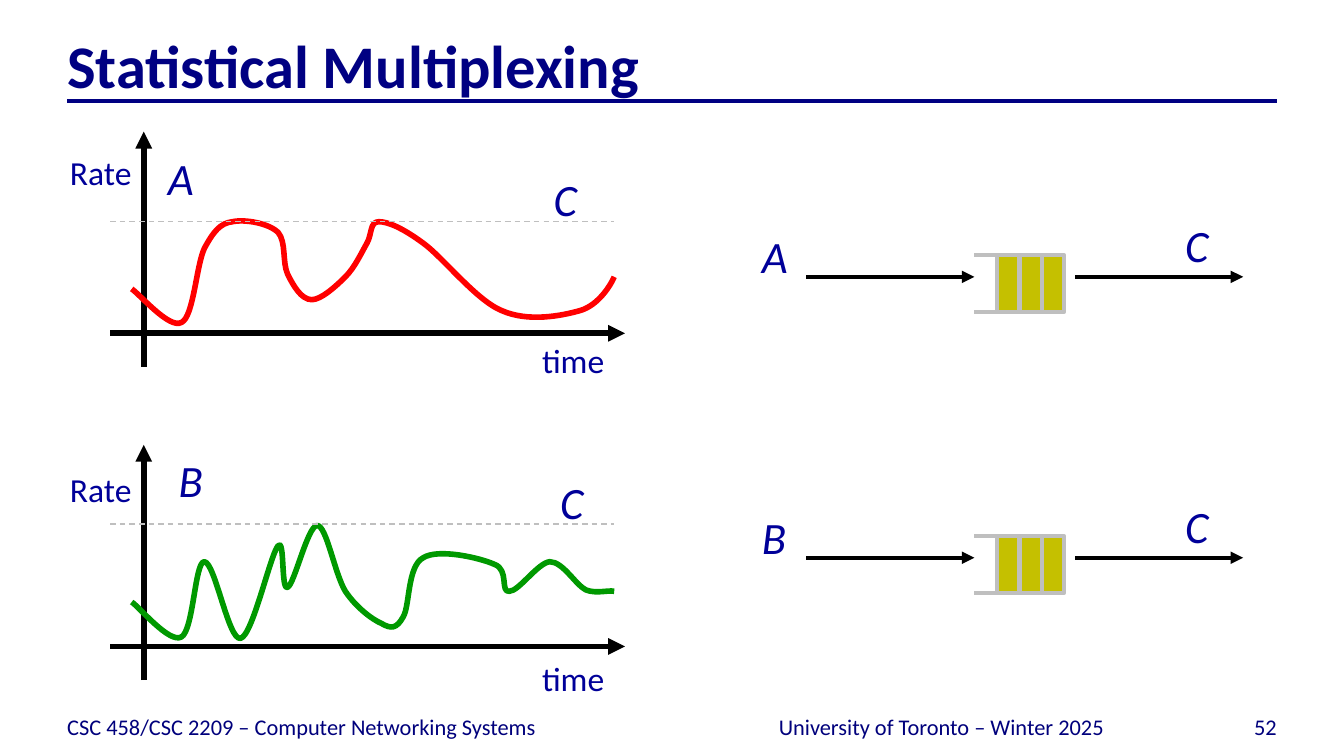
from lxml import etree
from pptx import Presentation
from pptx.dml.color import RGBColor
from pptx.enum.dml import MSO_LINE
from pptx.enum.shapes import MSO_CONNECTOR, MSO_SHAPE
from pptx.enum.text import MSO_ANCHOR, MSO_AUTO_SIZE, PP_ALIGN
from pptx.oxml.ns import qn
from pptx.util import Inches, Pt

LEFT, CENTER, RIGHT = PP_ALIGN.LEFT, PP_ALIGN.CENTER, PP_ALIGN.RIGHT
TOP, BOTTOM = MSO_ANCHOR.TOP, MSO_ANCHOR.BOTTOM

# Content
TITLE = "Statistical Multiplexing"
FOOTERS = [  # text, left, width, alignment
    ("CSC 458/CSC 2209 – Computer Networking Systems", 0.5, 4.83, LEFT),
    ("52", 8.67, 0.83, RIGHT),
    ("University of Toronto – Winter 2025", 5.42, 3.17, CENTER),
]
NAVY, FOOTER_BLUE, LABEL_BLUE = "000082", "00007C", "000099"
BLACK, GREY, OLIVE = "000000", "BFBFBF", "C5C000"

# Each curve is a start point, then two control points and an end point per bend
FLOWS = [
    dict(name="A", color="FF0000", axis_top=0.98, capacity=1.65, link=2.06,
         name_at=(1.15, 1.07), c_at=(4.02, 1.23), rate_top=1.08, time_top=2.48,
         curve=[
             (0.98, 2.15),
             (1.04, 2.19), (1.26, 2.45), (1.35, 2.4),
             (1.44, 2.36), (1.46, 1.98), (1.52, 1.85),
             (1.59, 1.72), (1.64, 1.66), (1.73, 1.65),
             (1.82, 1.63), (2, 1.66), (2.07, 1.73),
             (2.13, 1.8), (2.1, 1.95), (2.14, 2.04),
             (2.18, 2.12), (2.24, 2.23), (2.32, 2.23),
             (2.39, 2.23), (2.5, 2.13), (2.57, 2.06),
             (2.64, 1.99), (2.69, 1.88), (2.73, 1.81),
             (2.77, 1.74), (2.75, 1.65), (2.82, 1.65),
             (2.89, 1.65), (3, 1.7), (3.15, 1.81),
             (3.3, 1.92), (3.54, 2.23), (3.73, 2.31),
             (3.93, 2.4), (4.18, 2.35), (4.32, 2.31),
             (4.45, 2.27), (4.54, 2.13), (4.57, 2.06)]),
    dict(name="B", color="009900", axis_top=3.31, capacity=3.9, link=4.15,
         name_at=(1.23, 3.32), c_at=(4.07, 3.48), rate_top=3.44, time_top=4.85,
         curve=[
             (0.98, 4.48),
             (1.04, 4.52), (1.26, 4.79), (1.35, 4.74),
             (1.44, 4.69), (1.45, 4.18), (1.52, 4.18),
             (1.6, 4.18), (1.7, 4.77), (1.79, 4.75),
             (1.88, 4.73), (2.01, 4.13), (2.07, 4.06),
             (2.12, 4), (2.09, 4.4), (2.14, 4.37),
             (2.19, 4.35), (2.29, 3.91), (2.36, 3.91),
             (2.43, 3.91), (2.49, 4.27), (2.57, 4.4),
             (2.65, 4.52), (2.77, 4.61), (2.84, 4.64),
             (2.91, 4.68), (2.95, 4.68), (3, 4.59),
             (3.05, 4.51), (3.03, 4.21), (3.15, 4.15),
             (3.26, 4.08), (3.57, 4.15), (3.68, 4.2),
             (3.79, 4.24), (3.72, 4.41), (3.79, 4.4),
             (3.86, 4.4), (4, 4.19), (4.09, 4.18),
             (4.19, 4.18), (4.28, 4.35), (4.36, 4.39),
             (4.44, 4.42), (4.52, 4.39), (4.57, 4.4)]),
]

# Plot and queue measures
AXIS_X, AXIS_HEIGHT, BASELINE_DROP = 1.07, 1.75, 1.5
PLOT_LEFT, PLOT_RIGHT = 0.82, 4.57
SLOT_LEFT, SLOT_WIDTH, SLOT_HEIGHT, SLOTS = 7.42, 1 / 6, 0.42, 3
QUEUE_RISE = 0.16

prs = Presentation()
prs.slide_width, prs.slide_height = Inches(10), Inches(10 * 9 / 16)
slide = prs.slides.add_slide(prs.slide_layouts[5])
shapes = slide.shapes


def rgb(color):
    return RGBColor.from_string(color)


def style_line(line, color, width):
    line.color.rgb = rgb(color)
    line.width = Pt(width)


def add_line(start, end, color, width, arrow=False, dashed=False):
    connector = shapes.add_connector(
        MSO_CONNECTOR.STRAIGHT, *(Inches(v) for v in (*start, *end)))
    style_line(connector.line, color, width)
    if dashed:
        connector.line.dash_style = MSO_LINE.DASH
    if arrow:
        etree.SubElement(connector.line._get_or_add_ln(), qn("a:tailEnd"), type="triangle")
    etree.SubElement(connector._element.spPr, qn("a:effectLst"))


def write(shape, text, size, color, align=LEFT, anchor=TOP, bold=False, italic=False):
    frame = shape.text_frame
    frame.text = text
    frame.vertical_anchor = anchor
    paragraph = frame.paragraphs[0]
    paragraph.alignment = align
    font = paragraph.font
    font.name, font.size, font.color.rgb = "Calibri", Pt(size), rgb(color)
    font.bold, font.italic = bold, italic
    return frame


def set_insets(frame, top=0):
    frame.margin_left = frame.margin_right = frame.margin_bottom = 0
    frame.margin_top = Inches(top)


def add_label(text, left, top, width, height=0.4, size=18, align=CENTER, italic=False):
    box = shapes.add_textbox(*(Inches(v) for v in (left, top, width, height)))
    frame = write(box, text, size, LABEL_BLUE, align, italic=italic)
    frame.word_wrap = False
    frame.auto_size = MSO_AUTO_SIZE.SHAPE_TO_FIT_TEXT


def add_symbol(text, left, top):
    add_label(text, left, top, 0.38, 0.5, 24, LEFT, italic=True)


def add_curve(points, color):
    # Freeform points are whole numbers, so they are given in hundredths of an inch
    start, *bends = [(round(x * 100), round(y * 100)) for x, y in points]
    builder = shapes.build_freeform(*start, scale=Inches(0.01))
    builder.add_line_segments(bends, close=False)
    curve = builder.convert_to_shape()
    curve.shadow.inherit = False
    curve.fill.background()
    style_line(curve.line, color, 3)
    # Turn every three straight segments into one Bézier bend
    segments = curve._element.xpath(".//a:lnTo")
    for i in range(0, len(segments), 3):
        bend = etree.Element(qn("a:cubicBezTo"))
        segments[i].addprevious(bend)
        for segment in segments[i:i + 3]:
            bend.append(segment[0])
            segment.getparent().remove(segment)


def add_plot(flow):
    top = flow["axis_top"]
    baseline = top + BASELINE_DROP
    add_line((AXIS_X, top + AXIS_HEIGHT), (AXIS_X, top), BLACK, 3, arrow=True)
    add_line((PLOT_LEFT, baseline), (4.65, baseline), BLACK, 3, arrow=True)
    add_curve(flow["curve"], flow["color"])
    add_line((PLOT_LEFT, flow["capacity"]), (PLOT_RIGHT, flow["capacity"]),
             GREY, 0.75, dashed=True)
    add_symbol(flow["name"], *flow["name_at"])
    add_symbol("C", *flow["c_at"])
    add_label("time", 3.93, flow["time_top"], 0.67)
    add_label("Rate", 0.42, flow["rate_top"], 0.66)


def add_queue(flow):
    link = flow["link"]
    top = link - QUEUE_RISE
    add_line((6, link), (7.25, link), BLACK, 2.25, arrow=True)
    for i in range(SLOTS):
        slot = shapes.add_shape(
            MSO_SHAPE.RECTANGLE, Inches(SLOT_LEFT + i * SLOT_WIDTH), Inches(top),
            Inches(SLOT_WIDTH), Inches(SLOT_HEIGHT))
        slot.shadow.inherit = False
        slot.fill.solid()
        slot.fill.fore_color.rgb = rgb(OLIVE)
        style_line(slot.line, GREY, 2.25)
    for edge in (top, top + SLOT_HEIGHT):
        add_line((7.25, edge), (7.58, edge), GREY, 2.25)
    add_line((8, link), (9.25, link), BLACK, 2.25, arrow=True)
    add_symbol(flow["name"], 5.57, link - 0.41)
    add_symbol("C", 8.72, link - 0.49)


# Title with rule
title = shapes.title
title.left, title.top, title.width, title.height = (Inches(v) for v in (0.5, 0.25, 9, 0.5))
set_insets(write(title, TITLE, 32.4, NAVY, anchor=BOTTOM, bold=True), top=0.05)
add_line((0.5, 0.75), (9.5, 0.75), NAVY, 2.25)

# Footer
for text, left, width, align in FOOTERS:
    footer = shapes.add_textbox(Inches(left), Inches(5.21), Inches(width), Inches(0.3))
    frame = write(footer, text, 12, FOOTER_BLUE, align, BOTTOM)
    frame.word_wrap = True
    set_insets(frame)

# One plot and one queue per flow
for flow in FLOWS:
    add_plot(flow)
    add_queue(flow)

prs.save("out.pptx")
